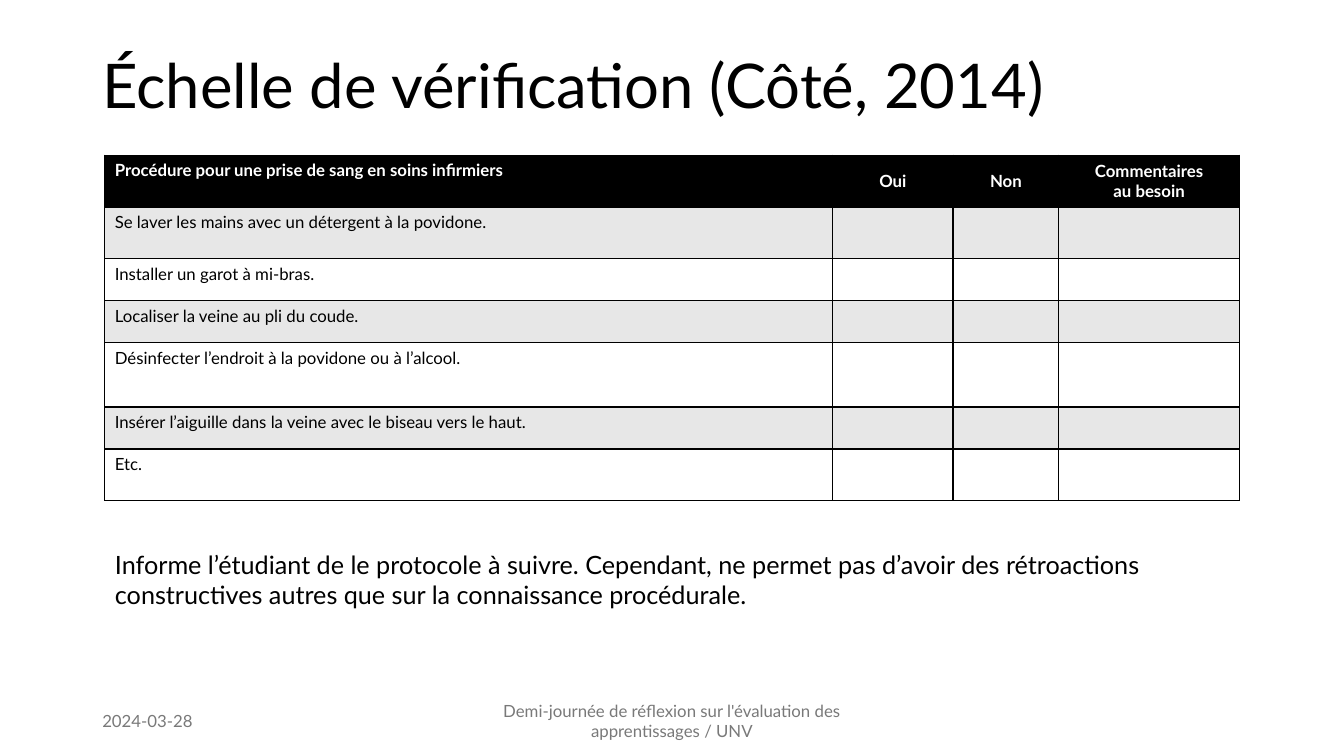
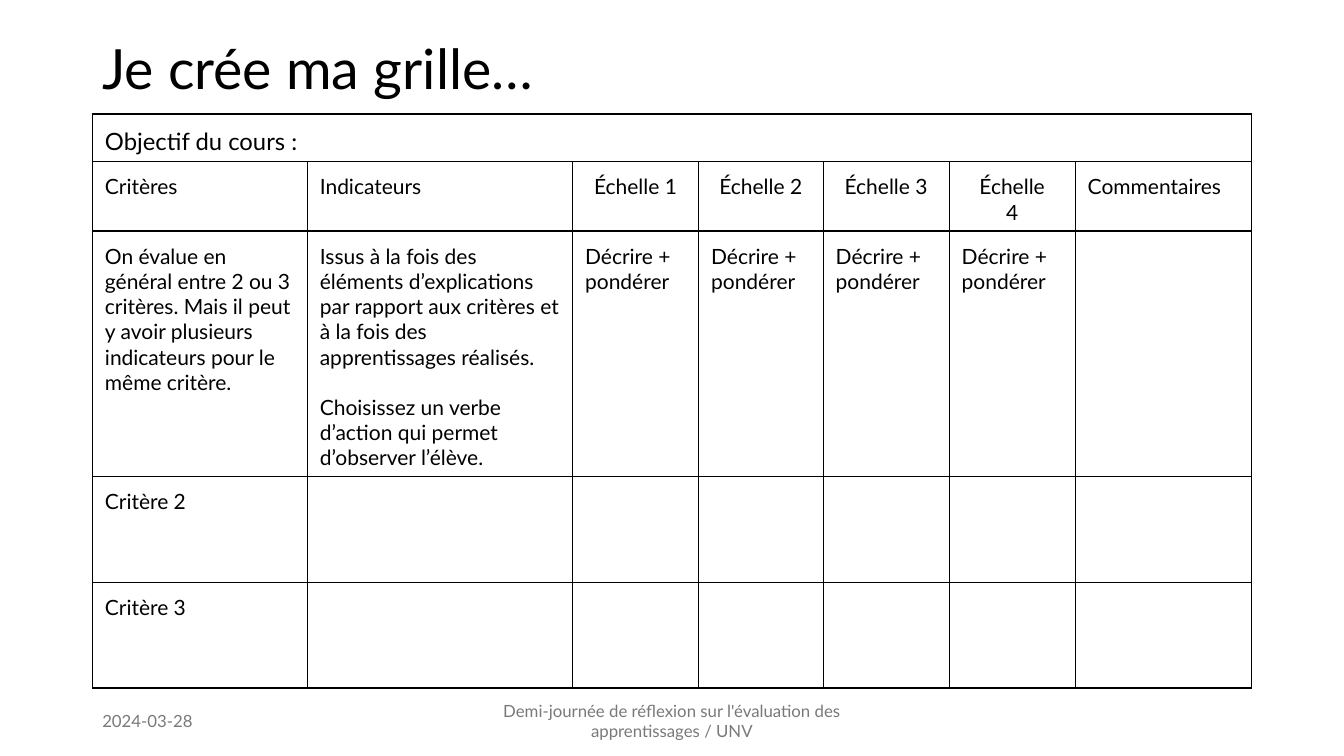
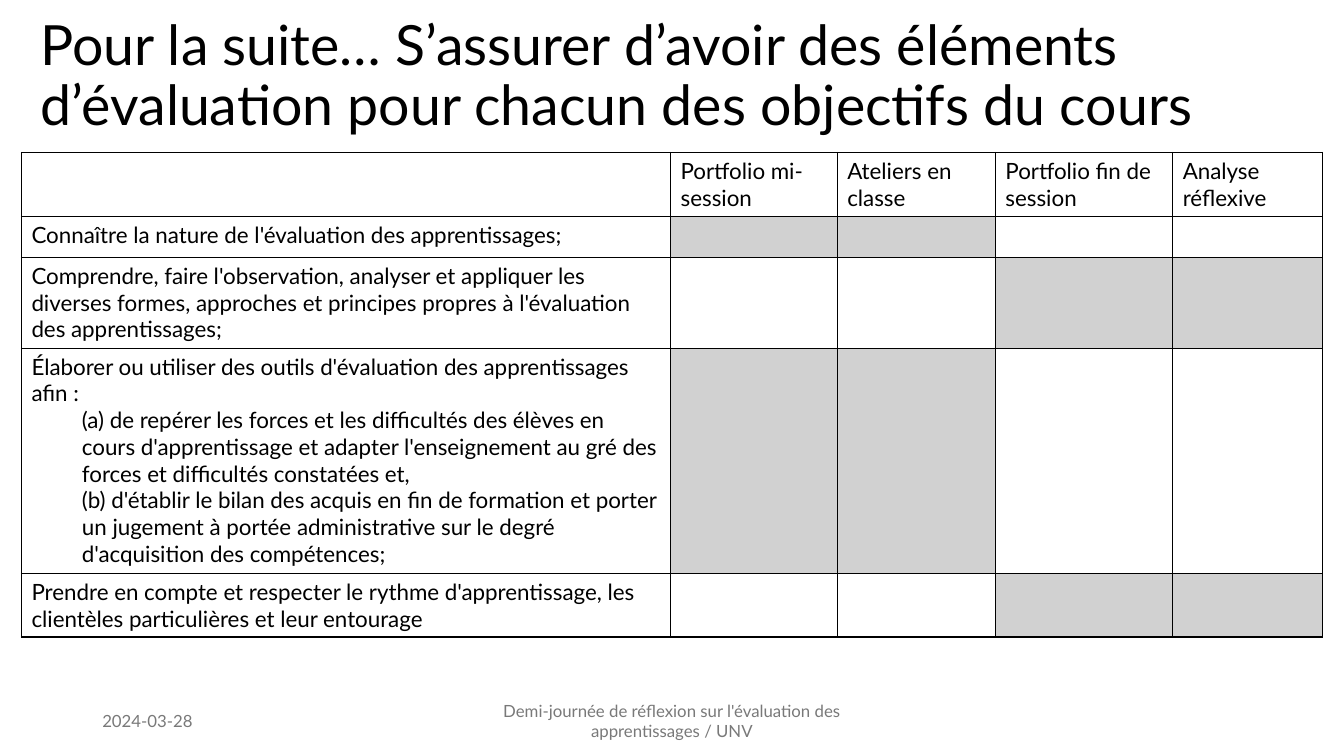
from lxml import etree
from pptx import Presentation
from pptx.dml.color import RGBColor
from pptx.enum.text import MSO_ANCHOR, PP_ALIGN
from pptx.oxml.ns import qn
from pptx.util import Pt

BLACK = RGBColor(0x00, 0x00, 0x00)
WHITE = RGBColor(0xFF, 0xFF, 0xFF)
GREY = RGBColor(0x79, 0x79, 0x79)
BAND = RGBColor(0xE7, 0xE7, 0xE7)
SHADE = RGBColor(0xD1, 0xD1, 0xD1)
LEFT, CENTER = PP_ALIGN.LEFT, PP_ALIGN.CENTER
TOP, MIDDLE = MSO_ANCHOR.TOP, MSO_ANCHOR.MIDDLE


class Deck:
    font = "Lato"
    date = "2024-03-28"
    event = "Demi-journée de réflexion sur l'évaluation des apprentissages / UNV"

    def __init__(self):
        self.prs = Presentation()
        self.prs.slide_width, self.prs.slide_height = Pt(960), Pt(540)
        self.slide = None

    def page(self, title, box, size):
        self.slide = self.prs.slides.add_slide(self.prs.slide_layouts[6])
        frame = self.text(title, box, size, anchor=MIDDLE)
        frame.paragraphs[0].line_spacing = 0.9
        self.text(self.date, (66, 500.4, 216, 28.8), 12, GREY, anchor=MIDDLE)
        self.text(self.event, (318, 500.4, 324, 28.8), 12, GREY, CENTER, MIDDLE)

    def style(self, frame, size, color=BLACK, align=LEFT, bold=False):
        for para in frame.paragraphs:
            para.alignment = align
            para.font.name = self.font
            para.font.size = Pt(size)
            para.font.bold = bold
            para.font.color.rgb = color

    def text(self, words, box, size, color=BLACK, align=LEFT, anchor=TOP):
        frame = self.slide.shapes.add_textbox(*map(Pt, box)).text_frame
        frame.word_wrap = True
        frame.vertical_anchor = anchor
        frame.text = words
        self.style(frame, size, color, align)
        return frame

    def border(self, cell):
        props = cell._tc.get_or_add_tcPr()
        for side in ("lnL", "lnR", "lnT", "lnB"):
            line = etree.SubElement(props, qn("a:" + side), w=str(Pt(1)))
            fill = etree.SubElement(line, qn("a:solidFill"))
            etree.SubElement(fill, qn("a:srgbClr"), val=str(BLACK))

    def table(self, left, top, cols, rows, words, size, paint):
        grid = self.slide.shapes.add_table(
            len(rows), len(cols), Pt(left), Pt(top), Pt(sum(cols)), Pt(sum(rows))
        ).table
        grid.first_row = grid.horz_banding = False
        for col, width in zip(grid.columns, cols):
            col.width = Pt(width)
        for r, height in enumerate(rows):
            grid.rows[r].height = Pt(height)
            for c in range(len(cols)):
                cell = grid.cell(r, c)
                self.border(cell)
                color = paint(r, c)
                if color is None:
                    cell.fill.background()
                else:
                    cell.fill.solid()
                    cell.fill.fore_color.rgb = color
                if c < len(words[r]):
                    cell.text = words[r][c]
                self.style(cell.text_frame, size)
        return grid


def check(deck):
    deck.page("Échelle de vérification (Côté, 2014)", (66, 31, 828, 64), 44)
    words = [
        ["Procédure pour une prise de sang en soins infirmiers",
         "Oui", "Non", "Commentaires\nau besoin"],
        ["Se laver les mains avec un détergent à la povidone."],
        ["Installer un garot à mi-bras."],
        ["Localiser la veine au pli du coude."],
        ["Désinfecter l’endroit à la povidone ou à l’alcool."],
        ["Insérer l’aiguille dans la veine avec le biseau vers le haut."],
        ["Etc."],
    ]

    def paint(r, c):
        return BLACK if r == 0 else BAND if r % 2 else WHITE

    grid = deck.table(74.8, 110.8, [520, 86, 75.6, 129],
                      [37, 37, 30, 30, 46, 30, 37], words, 12, paint)
    for c in range(4):
        head = grid.cell(0, c)
        head.vertical_anchor = MIDDLE if c else TOP
        deck.style(head.text_frame, 12, WHITE, CENTER if c else LEFT, True)
    deck.text("Informe l’étudiant de le protocole à suivre. Cependant, ne permet pas "
              "d’avoir des rétroactions constructives autres que sur la connaissance "
              "procédurale.", (75, 389, 810, 51), 18)


def rubric(deck):
    deck.page("Je crée ma grille…", (66, 28.5, 828, 45), 39.6)
    words = [
        ["Objectif du cours :"],
        ["Critères", "Indicateurs", "Échelle 1", "Échelle 2", "Échelle 3",
         "Échelle\n4", "Commentaires"],
        ["On évalue en général entre 2 ou 3 critères. Mais il peut y avoir plusieurs "
         "indicateurs pour le même critère.",
         "Issus à la fois des éléments d’explications par rapport aux critères et "
         "à la fois des apprentissages réalisés.\n"
         "Choisissez un verbe d’action qui permet d’observer l’élève."]
        + ["Décrire + pondérer"] * 4,
        ["Critère 2"],
        ["Critère 3"],
    ]
    grid = deck.table(66, 81.5, [153.5, 189.5, 90, 89, 90, 90, 126],
                      [34, 49.5, 175.5, 75.5, 75.5], words, 15, lambda r, c: None)
    for cell in grid.iter_cells():
        cell.margin_left = cell.margin_right = cell.margin_top = Pt(9)
        cell.margin_bottom = Pt(4.5)
    goal = grid.cell(0, 0)
    goal.merge(grid.cell(0, 6))
    goal.vertical_anchor = MIDDLE
    deck.style(goal.text_frame, 17)
    for c in range(2, 6):
        deck.style(grid.cell(1, c).text_frame, 15, align=CENTER)
    grid.cell(2, 1).text_frame.paragraphs[1].space_before = Pt(18)


def goals(deck):
    deck.page("Pour la suite… S’assurer d’avoir des éléments d’évaluation pour "
              "chacun des objectifs du cours", (22, 11.5, 930, 88), 39.6)
    words = [
        ["", "Portfolio mi-session", "Ateliers en classe",
         "Portfolio fin de session", "Analyse réflexive"],
        ["Connaître la nature de l'évaluation des apprentissages;"],
        ["Comprendre, faire l'observation, analyser et appliquer les diverses formes, "
         "approches et principes propres à l'évaluation des apprentissages;"],
        ["Élaborer ou utiliser des outils d'évaluation des apprentissages afin :\n"
         "(a) de repérer les forces et les difficultés des élèves en cours "
         "d'apprentissage et adapter l'enseignement au gré des forces et difficultés "
         "constatées et,\n"
         "(b) d'établir le bilan des acquis en fin de formation et porter un jugement "
         "à portée administrative sur le degré d'acquisition des compétences;"],
        ["Prendre en compte et respecter le rythme d'apprentissage, les clientèles "
         "particulières et leur entourage"],
    ]

    def paint(r, c):
        return SHADE if r and c and (r % 2 == 1) == (c < 3) else WHITE

    grid = deck.table(15.3, 109, [463.7, 119, 113, 126.7, 107],
                      [45.6, 29.3, 64.2, 160, 45.6], words, 16, paint)
    for para in grid.cell(3, 0).text_frame.paragraphs[1:]:
        para.level = 1
        props = para._p.get_or_add_pPr()
        props.set("marL", str(Pt(36)))
        props.set("indent", "0")


def main():
    deck = Deck()
    for build in (check, rubric, goals):
        build(deck)
    deck.prs.save("out.pptx")


if __name__ == "__main__":
    main()
